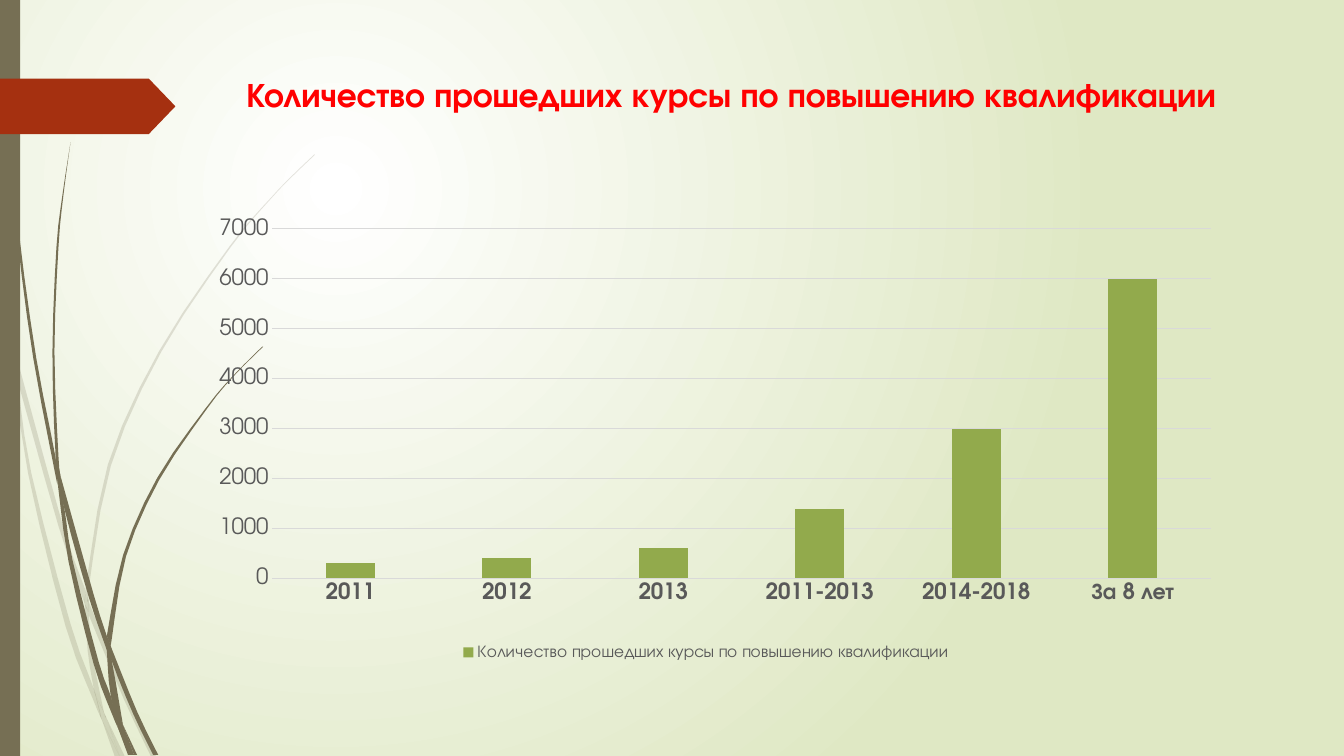
from lxml import etree
from pptx import Presentation
from pptx import util as u
from pptx.chart.data import CategoryChartData
from pptx.dml.color import RGBColor
from pptx.enum import chart as charts, shapes, text
from pptx.oxml.ns import qn

COLORS = {
    "white": "FFFFFF", "mist": "DFE8C4", "stem": "766F54", "flag": "A53010",
    "title": "FF0000", "label": "595959", "grid": "D9D9D9", "bar": "92AA4C",
}
FONT = "TeX Gyre Adventor"
TITLE = "Количество прошедших курсы по повышению квалификации"
COURSES = {"2011": 300, "2012": 400, "2013": 600,
           "2011-2013": 1400, "2014-2018": 3000, "За 8 лет": 6000}

PALE_BLADES = [
    ([(0, 2.99), (0.1, 3.44), (0.11, 3.5)], [(0, 2.82), (0.09, 3.22), (0.11, 3.5)]),
    ([(0.17, 3.76), (0.58, 5.22), (0.84, 5.99)], [(0.14, 3.45), (0.62, 5.2), (0.85, 5.86)]),
    ([(0.88, 6.1), (1.23, 6.94), (1.5, 7.51)],
     [(0.88, 5.96), (0.92, 6.07), (1.27, 6.92), (1.55, 7.51)]),
    ([(1.05, 7.11), (1.19, 7.51)], [(1.05, 7.11), (1.24, 7.51)]),
    ([(0.11, 3.5), (0.28, 4.7), (0.65, 6.21), (0.92, 6.93), (1.01, 7.14)],
     [(0.11, 3.5), (0.17, 3.76), (0.31, 4.69), (0.7, 6.19), (0.93, 6.83), (1.01, 7.14)]),
    ([(0.84, 5.99), (0.87, 6.46), (0.93, 6.83), (0.96, 6.92), (1.05, 7.11)],
     [(0.84, 5.99), (0.88, 6.1), (0.91, 6.46), (1.03, 7.06), (1.05, 7.11)]),
    ([(3.12, 1.53), (2.89, 1.75), (2.68, 1.97), (2.28, 2.44), (1.58, 3.48),
      (1.07, 4.61), (0.85, 5.84)],
     [(3.12, 1.54), (2.9, 1.75), (2.68, 1.98), (2.29, 2.45), (1.6, 3.49),
      (1.1, 4.62), (0.88, 5.84), (0.88, 5.96)]),
    ([(1.01, 7.14), (1.14, 7.51)], [(1.01, 7.14), (1.19, 7.51)]),
    ([(0.85, 5.86), (0.84, 5.99), (0.88, 6.08)], [(0.85, 5.86), (0.88, 5.96), (0.88, 6.1)]),
    ([(0.93, 6.83), (0.99, 7.07), (1.01, 7.14), (1.19, 7.51)],
     [(0.93, 6.83), (0.96, 6.92), (1.05, 7.11), (1.19, 7.51)]),
]
DARK_BLADES = [
    ([(0.03, 0), (0.04, 0.48), (0.07, 1.1), (0.17, 2.33), (0.33, 3.55), (0.57, 4.81)],
     [(0.04, 0), (0.05, 0.48), (0.08, 1.09), (0.19, 2.32), (0.36, 3.55), (0.55, 4.53),
      (0.57, 4.81)]),
    ([(0.6, 4.72), (0.64, 5.05), (0.88, 5.92), (1.06, 6.45)],
     [(0.6, 4.72), (0.93, 5.9), (1.06, 6.31)]),
    ([(1.1, 6.41), (1.11, 6.56), (1.32, 7.08), (1.52, 7.49)],
     [(1.1, 6.41), (1.13, 6.49), (1.36, 7.06), (1.57, 7.49)]),
    ([(0.57, 4.77), (0.68, 5.57), (0.93, 6.59), (1.11, 7.08), (1.17, 7.22)],
     [(0.57, 4.77), (0.64, 5.05), (0.72, 5.56), (0.98, 6.57), (1.1, 6.91), (1.17, 7.22)]),
    ([(0.7, 1.41), (0.62, 1.93), (0.56, 2.45), (0.52, 3.49), (0.55, 4.49), (0.6, 4.72)],
     [(0.7, 1.41), (0.63, 1.93), (0.58, 2.45), (0.54, 3.49), (0.58, 4.53), (0.6, 4.72)]),
    ([(1.22, 7.19), (1.33, 7.49)], [(1.22, 7.19), (1.36, 7.49)]),
    ([(0.55, 4.49), (0.57, 4.77), (0.64, 5.05)], [(0.55, 4.49), (0.6, 4.72), (0.64, 5.05)]),
    ([(2.6, 3.44), (2.31, 3.73), (2.04, 4.05), (1.56, 4.74), (1.22, 5.51), (1.06, 6.31)],
     [(2.61, 3.44), (2.31, 3.74), (2.05, 4.06), (1.58, 4.76), (1.25, 5.52),
      (1.11, 6.33), (1.1, 6.41)]),
    ([(1.17, 7.22), (1.27, 7.49)], [(1.17, 7.22), (1.31, 7.49)]),
    ([(1.06, 6.45), (1.1, 6.91), (1.22, 7.19)], [(1.06, 6.45), (1.11, 6.56), (1.22, 7.19)]),
    ([(1.06, 6.31), (1.06, 6.45), (1.11, 6.56)], [(1.06, 6.31), (1.1, 6.41), (1.11, 6.56)]),
    ([(1.1, 6.91), (1.17, 7.22), (1.3, 7.49)], [(1.1, 6.91), (1.22, 7.19), (1.33, 7.49)]),
]


def rgb(name):
    return RGBColor.from_string(COLORS[name])


def smooth(points, steps=3):
    padded = [points[0], *points, points[-1]]
    curve = []
    for a, b, c, d in zip(padded, padded[1:], padded[2:], padded[3:]):
        for step in range(steps):
            t = step / steps
            curve.append(tuple(
                q + t / 2 * (r - p + t * (2 * p - 5 * q + 4 * r - s + t * (3 * q - p - 3 * r + s)))
                for p, q, r, s in zip(a, b, c, d)))
    return curve + [points[-1]]


class SlideBuilder:
    def __init__(self, page, font):
        self.page = page
        self.font = font

    def style(self, font, size, color, bold=False):
        font.name, font.size, font.bold = self.font, u.Pt(size), bold
        font.color.rgb = rgb(color)

    def paint(self, shape, color):
        shape.shadow.inherit = False
        shape.fill.solid()
        shape.fill.fore_color.rgb = rgb(color)
        shape.line.fill.background()

    def background(self, center, edge):
        fill = self.page.background.fill
        fill.gradient()
        for stop, color, position in zip(fill.gradient_stops, (center, edge), (0, 1)):
            stop.color.rgb = rgb(color)
            stop.position = position
        gradient = self.page.element.find(".//" + qn("a:gradFill"))
        gradient.remove(gradient.find(qn("a:lin")))
        circle = etree.SubElement(gradient, qn("a:path"), {"path": "circle"})
        etree.SubElement(circle, qn("a:fillToRect"),
                         {"l": "50000", "t": "50000", "r": "100000", "b": "100000"})

    def blade(self, left_edge, right_edge, color, opacity=100):
        outline = [(u.Inches(x), u.Inches(y))
                   for x, y in smooth(left_edge) + smooth(right_edge)[::-1]]
        builder = self.page.shapes.build_freeform(*outline[0])
        builder.add_line_segments(outline[1:], close=True)
        shape = builder.convert_to_shape()
        self.paint(shape, color)
        if opacity < 100:
            tint = shape.element.spPr.find(qn("a:solidFill"))[0]
            etree.SubElement(tint, qn("a:alpha"), {"val": str(opacity * 1000)})

    def shape(self, kind, left, top, width, height, color):
        shape = self.page.shapes.add_shape(kind, *map(u.Inches, (left, top, width, height)))
        self.paint(shape, color)
        return shape

    def title(self, words, left, top, width, height, size, color):
        box = self.page.shapes.add_textbox(*map(u.Inches, (left, top, width, height)))
        box.text_frame.word_wrap = True
        para = box.text_frame.paragraphs[0]
        para.text = words
        para.alignment = text.PP_ALIGN.CENTER
        self.style(para.font, size, color, bold=True)

    def column_chart(self, name, values, left, top, width, height, plot_area):
        data = CategoryChartData()
        data.categories = list(values)
        data.add_series(name, values.values())
        chart = self.page.shapes.add_chart(
            charts.XL_CHART_TYPE.COLUMN_CLUSTERED,
            *map(u.Inches, (left, top, width, height)), data).chart
        self.style(chart.font, 10, "label")
        chart.has_title = False
        chart.has_legend = True
        chart.legend.position = charts.XL_LEGEND_POSITION.BOTTOM
        chart.legend.include_in_layout = False
        self.style(chart.legend.font, 12, "label")
        plot = chart.plots[0]
        plot.gap_width, plot.overlap, plot.vary_by_categories = 219, -27, False
        bars = plot.series[0].format.fill
        bars.solid()
        bars.fore_color.rgb = rgb("bar")
        for axis, bold in ((chart.category_axis, True), (chart.value_axis, False)):
            axis.major_tick_mark = axis.minor_tick_mark = charts.XL_TICK_MARK.NONE
            self.style(axis.tick_labels.font, 16, "label", bold)
        scale = chart.value_axis
        scale.minimum_scale, scale.maximum_scale, scale.major_unit = 0, 7000, 1000
        scale.format.line.fill.background()
        for line in (chart.category_axis.format.line, scale.major_gridlines.format.line):
            line.color.rgb = rgb("grid")
            line.width = u.Pt(0.75)
        shares = [part / whole for part, whole in zip(plot_area, (width, height) * 2)]
        self.place_plot(chart, shares)

    def place_plot(self, chart, shares):
        area = chart.element.find(".//" + qn("c:plotArea"))
        layout = area.find(qn("c:layout"))
        if layout is None:
            layout = etree.Element(qn("c:layout"))
            area.insert(0, layout)
        manual = etree.SubElement(layout, qn("c:manualLayout"))
        settings = {"layoutTarget": "inner", "xMode": "edge", "yMode": "edge",
                    **dict(zip("xywh", shares))}
        for tag, value in settings.items():
            etree.SubElement(manual, qn("c:" + tag), {"val": str(value)})


def main():
    deck = Presentation()
    deck.slide_width, deck.slide_height = u.Inches(13.33), u.Inches(7.5)
    slide = SlideBuilder(deck.slides.add_slide(deck.slide_layouts[6]), FONT)
    slide.background("white", "mist")
    for blades, opacity in ((PALE_BLADES, 20), (DARK_BLADES, 100)):
        for edges in blades:
            slide.blade(*edges, "stem", opacity)
    slide.shape(shapes.MSO_SHAPE.RECTANGLE, 0, 0, 0.2, 7.5, "stem")
    flag = slide.shape(shapes.MSO_SHAPE.PENTAGON, 0, 0.78, 1.74, 0.55, "flag")
    flag.adjustments[0] = 0.48
    slide.title(TITLE, 1.92, 0.68, 10.67, 1.4, 24.3, "title")
    slide.column_chart(TITLE, COURSES, 1.85, 2.04, 10.31, 4.55, (0.85, 0.23, 9.31, 3.47))
    deck.save("out.pptx")


if __name__ == "__main__":
    main()
